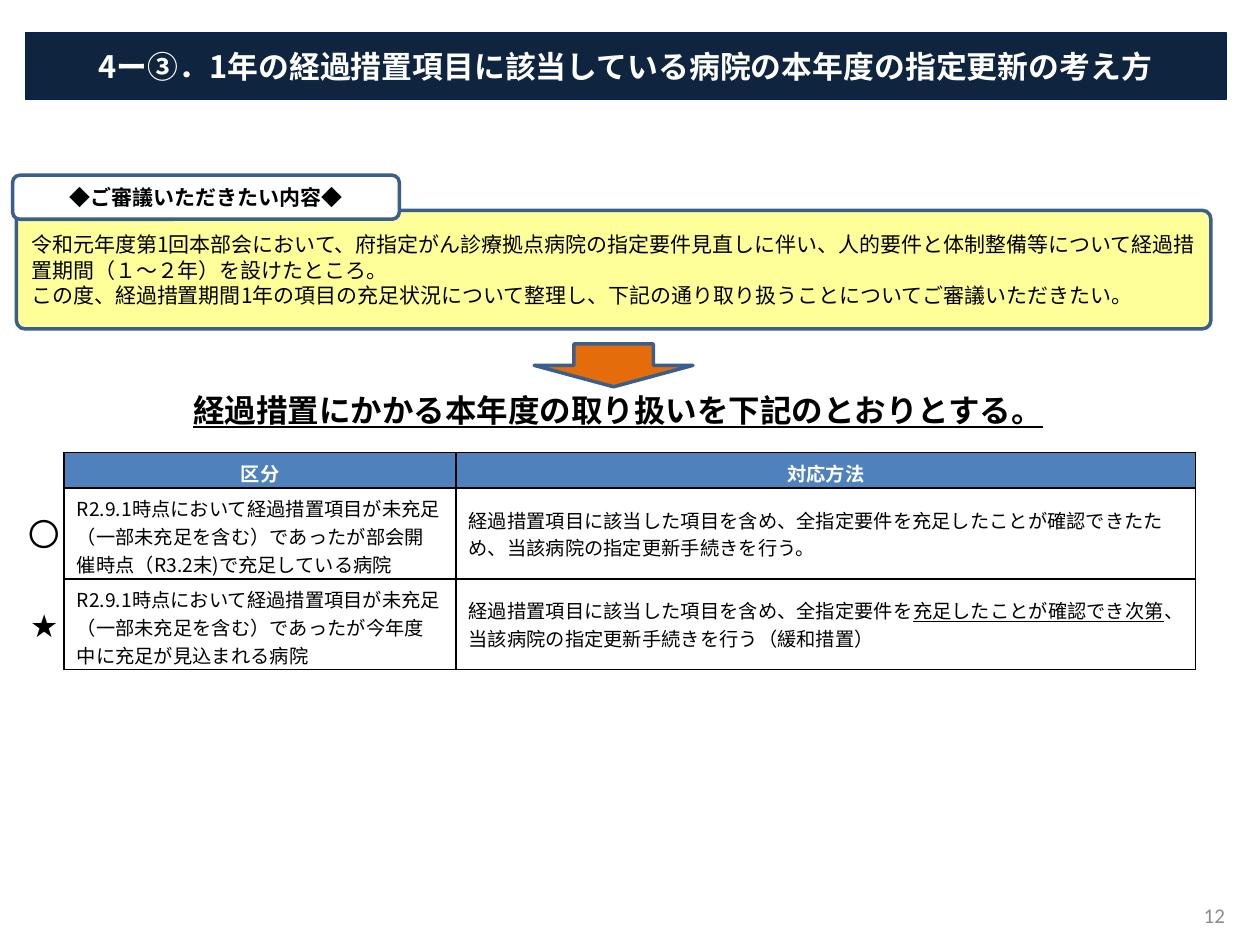
"""Build the slide on renewing designations under one-year transitional measures."""
from lxml import etree
from pptx import Presentation
from pptx.dml.color import RGBColor
from pptx.enum.shapes import MSO_SHAPE
from pptx.enum.text import MSO_ANCHOR, PP_ALIGN
from pptx.oxml.ns import qn
from pptx.util import Inches, Pt

RECTANGLE = MSO_SHAPE.RECTANGLE
ROUNDED = MSO_SHAPE.ROUNDED_RECTANGLE
DOWN_ARROW = MSO_SHAPE.DOWN_ARROW
TOP, MIDDLE = MSO_ANCHOR.TOP, MSO_ANCHOR.MIDDLE
LEFT, CENTER, RIGHT = PP_ALIGN.LEFT, PP_ALIGN.CENTER, PP_ALIGN.RIGHT

BLACK = RGBColor(0x00, 0x00, 0x00)
WHITE = RGBColor(0xFF, 0xFF, 0xFF)
GRAY = RGBColor(0x8C, 0x8C, 0x8C)
NAVY = RGBColor(0x0F, 0x24, 0x3E)
NAVY_EDGE = RGBColor(0x00, 0x20, 0x60)
BLUE = RGBColor(0x4F, 0x81, 0xBD)
BLUE_EDGE = RGBColor(0x3A, 0x5F, 0x8C)
YELLOW = RGBColor(0xFF, 0xFF, 0x99)
ORANGE = RGBColor(0xE4, 0x6C, 0x0A)

JAPANESE = "Noto Sans CJK JP"
LATIN = "Calibri"

TITLE = "4ー③．1年の経過措置項目に該当している病院の本年度の指定更新の考え方"
BACKGROUND = [
    "令和元年度第1回本部会において、府指定がん診療拠点病院の指定要件見直しに伴い、"
    "人的要件と体制整備等について経過措置期間（１～２年）を設けたところ。",
    "この度、経過措置期間1年の項目の充足状況について整理し、"
    "下記の通り取り扱うことについてご審議いただきたい。",
]
HEADERS = ["区分", "対応方法"]
CASES = [
    ["R2.9.1時点において経過措置項目が未充足（一部未充足を含む）であったが"
     "部会開催時点（R3.2末)で充足している病院",
     "経過措置項目に該当した項目を含め、全指定要件を充足したことが確認できたため、"
     "当該病院の指定更新手続きを行う。"],
    ["R2.9.1時点において経過措置項目が未充足（一部未充足を含む）であったが"
     "今年度中に充足が見込まれる病院",
     [("経過措置項目に該当した項目を含め、全指定要件を", False),
      ("充足したことが確認でき次第", True),
      ("、当該病院の指定更新手続きを行う（緩和措置）", False)]],
]
COLUMN_WIDTHS = [3.11, 5.87]
ROW_HEIGHTS = [0.25, 0.72, 0.72]


def add_run(paragraph, text, size, color=BLACK, bold=False, underline=False, face=JAPANESE):
    """Append one formatted run to a paragraph."""
    run = paragraph.add_run()
    run.text = text
    font = run.font
    font.size, font.bold, font.underline, font.name = Pt(size), bold, underline, face
    font.color.rgb = color
    if face == JAPANESE:
        east_asian = etree.SubElement(run._r.get_or_add_rPr(), qn("a:ea"))
        east_asian.set("typeface", face)


def write(frame, lines, size, align=LEFT, anchor=MIDDLE, spacing=None, **style):
    """Fill a text frame with one paragraph per line."""
    frame.word_wrap = True
    frame.vertical_anchor = anchor
    for index, line in enumerate(lines):
        paragraph = frame.add_paragraph() if index else frame.paragraphs[0]
        paragraph.alignment = align
        if spacing:
            paragraph.line_spacing = Pt(spacing)
        add_run(paragraph, line, size, **style)


def add_panel(slide, kind, box, fill, edge, width=2):
    """Add a filled and outlined preset shape."""
    panel = slide.shapes.add_shape(kind, *map(Inches, box))
    panel.shadow.inherit = False
    panel.fill.solid()
    panel.fill.fore_color.rgb = fill
    panel.line.color.rgb = edge
    panel.line.width = Pt(width)
    return panel


def add_label(slide, box, text, size, **style):
    """Add a text box with a single line and return its frame."""
    frame = slide.shapes.add_textbox(*map(Inches, box)).text_frame
    write(frame, [text], size, **style)
    return frame


def add_borders(cell):
    """Draw a thin black border on all four sides of a cell."""
    properties = cell._tc.get_or_add_tcPr()
    for position, side in enumerate(("lnL", "lnR", "lnT", "lnB")):
        border = etree.Element(qn(f"a:{side}"), w=str(Pt(1)))
        solid = etree.SubElement(border, qn("a:solidFill"))
        etree.SubElement(solid, qn("a:srgbClr"), val=str(BLACK))
        properties.insert(position, border)


def fill_cell(cell, content, is_header):
    """Write and format one table cell."""
    cell.vertical_anchor = MIDDLE
    if is_header:
        cell.fill.solid()
        cell.fill.fore_color.rgb = BLUE
    else:
        cell.fill.background()
    add_borders(cell)
    paragraph = cell.text_frame.paragraphs[0]
    paragraph.alignment = CENTER if is_header else LEFT
    parts = [(content, False)] if isinstance(content, str) else content
    for text, underline in parts:
        add_run(paragraph, text, 11, WHITE if is_header else BLACK, is_header, underline)


def add_case_table(slide):
    """Add the table of hospital cases and how each is handled."""
    rows = [HEADERS] + CASES
    table = slide.shapes.add_table(
        len(rows), len(HEADERS), Inches(0.51), Inches(3.59),
        Inches(sum(COLUMN_WIDTHS)), Inches(sum(ROW_HEIGHTS))).table
    table.horz_banding = False
    for column, width in zip(table.columns, COLUMN_WIDTHS):
        column.width = Inches(width)
    for row, height, contents in zip(table.rows, ROW_HEIGHTS, rows):
        row.height = Inches(height)
        for cell, content in zip(row.cells, contents):
            fill_cell(cell, content, contents is HEADERS)


def main():
    """Build and save the slide."""
    deck = Presentation()
    deck.slide_width, deck.slide_height = Inches(10), Inches(7.5)
    slide = deck.slides.add_slide(deck.slide_layouts[6])

    add_panel(slide, DOWN_ARROW, (4.24, 2.73, 1.26, 0.34), ORANGE, BLUE_EDGE)
    add_label(slide, (7.57, 7.06, 2.25, 0.4), "12", 12, align=RIGHT, color=GRAY, face=LATIN)
    add_case_table(slide)

    background = add_panel(slide, ROUNDED, (0.13, 1.67, 9.48, 0.94), YELLOW, BLUE_EDGE)
    background.adjustments[0] = 0.07
    write(background.text_frame, BACKGROUND, 12, spacing=14.5)
    agenda = add_panel(slide, ROUNDED, (0.1, 1.39, 3.07, 0.35), WHITE, BLUE_EDGE)
    write(agenda.text_frame, ["◆ご審議いただきたい内容◆"], 12, align=CENTER, bold=True)

    conclusion = add_label(
        slide, (0.14, 2.97, 9.53, 0.56), "経過措置にかかる本年度の取り扱いを下記のとおりとする。",
        18, align=CENTER, bold=True, underline=True)
    conclusion.margin_top = conclusion.margin_bottom = 0

    title = add_panel(slide, RECTANGLE, (0.2, 0.26, 9.53, 0.53), NAVY, NAVY_EDGE, 0.75)
    write(title.text_frame, [TITLE], 17.6, align=CENTER, color=WHITE, bold=True)

    for mark, left, top in (("〇", 0.13, 4.04), ("★", 0.14, 4.76)):
        add_label(slide, (left, top, 0.53, 0.4), mark, 18, anchor=TOP, face=LATIN)

    deck.save("out.pptx")


if __name__ == "__main__":
    main()
